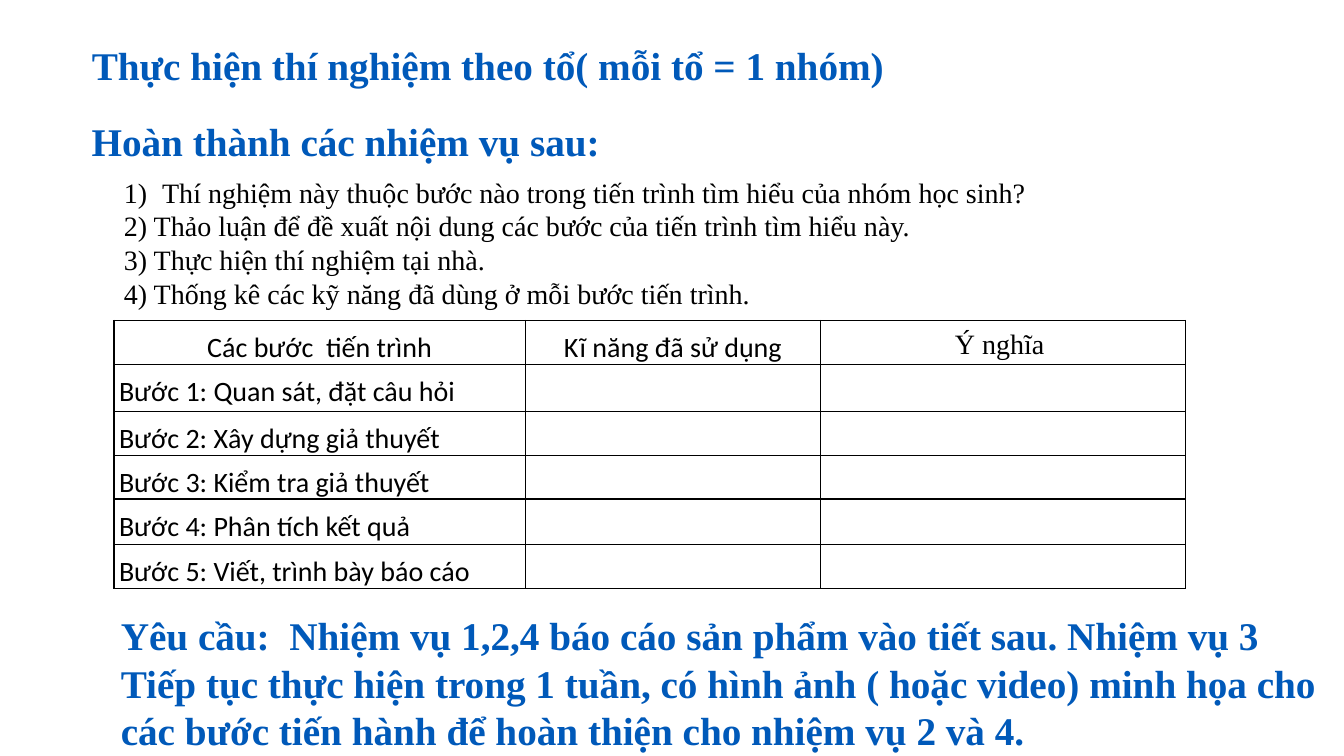
from dataclasses import dataclass

from lxml import etree
from pptx import Presentation
from pptx.dml.color import RGBColor
from pptx.enum.text import MSO_ANCHOR, MSO_AUTO_SIZE, PP_ALIGN
from pptx.oxml.ns import qn
from pptx.util import Inches, Pt

LEFT, MID, JUST = PP_ALIGN.LEFT, PP_ALIGN.CENTER, PP_ALIGN.JUSTIFY
TOP = MSO_ANCHOR.TOP
GROW = MSO_AUTO_SIZE.SHAPE_TO_FIT_TEXT


@dataclass(frozen=True)
class Theme:
    blue: RGBColor = RGBColor(0x00, 0x59, 0xB9)
    black: RGBColor = RGBColor(0, 0, 0)
    serif: str = "Times New Roman"
    sans: str = "Calibri"
    large: int = 28
    small: int = 20


THEME = Theme()
HEAD = {"name": THEME.serif, "size": Pt(THEME.large), "bold": True}
BODY = {"name": THEME.serif, "size": Pt(THEME.small), "bold": False}
CELL = {**BODY, "name": THEME.sans}

TASKS = [
    "Thí nghiệm này thuộc bước nào trong tiến trình tìm hiểu của nhóm học sinh?",
    "2) Thảo luận để đề xuất nội dung các bước của tiến trình tìm hiểu này.",
    "3) Thực hiện thí nghiệm tại nhà.",
    "4) Thống kê các kỹ năng đã dùng ở mỗi bước tiến trình.",
]
HEADS = ["Các bước  tiến trình", "Kĩ năng đã sử dụng", "Ý nghĩa "]
STEPS = [
    "Bước 1: Quan sát, đặt câu hỏi",
    "Bước 2: Xây dựng giả thuyết",
    "Bước 3: Kiểm tra giả thuyết",
    "Bước 4: Phân tích kết quả",
    "Bước 5: Viết, trình bày báo cáo",
]
NOTE = [
    "Yêu cầu:  Nhiệm vụ 1,2,4 báo cáo sản phẩm vào tiết sau. Nhiệm vụ 3",
    "Tiếp tục thực hiện trong 1 tuần, có hình ảnh ( hoặc video) minh họa cho",
    "các bước tiến hành để hoàn thiện cho nhiệm vụ 2 và 4.",
]
COLS = [4.08, 2.93, 3.62]
ROWS = [0.37, 0.47, 0.4, 0.43, 0.45, 0.43]


def apply(item, form):
    for key, value in form.items():
        setattr(item, key, value)


def share(deck, left, top, width, height):
    wide, high = deck.slide_width / 100, deck.slide_height / 100
    return [round(n) for n in (left * wide, top * high, width * wide, height * high)]


def write(frame, lines, form, tint, align=LEFT):
    for at, line in enumerate(lines):
        para = frame.add_paragraph() if at else frame.paragraphs[0]
        para.alignment = align
        run = para.add_run()
        run.text = line
        apply(run.font, form)
        run.font.color.rgb = tint


def add_title(slide, box, text):
    title = slide.shapes.title
    apply(title, dict(zip(("left", "top", "width", "height"), box)))
    frame = title.text_frame
    apply(frame, {"word_wrap": False, "auto_size": GROW, "vertical_anchor": TOP})
    write(frame, [text], HEAD, THEME.blue)


def add_text(slide, box, lines, form, tint, wrap=False, align=LEFT):
    frame = slide.shapes.add_textbox(*box).text_frame
    apply(frame, {"word_wrap": wrap, "auto_size": GROW})
    write(frame, lines, form, tint, align)
    return frame


def add_tasks(slide, box):
    frame = add_text(slide, box, TASKS, BODY, THEME.black, True, JUST)
    props = frame.paragraphs[0]._p.get_or_add_pPr()
    dent = Inches(0.38)
    props.set("marL", str(dent))
    props.set("indent", str(-dent))
    etree.SubElement(props, qn("a:buFont"), typeface=THEME.serif)
    etree.SubElement(props, qn("a:buAutoNum"), type="arabicParenR")


def add_rules(cell):
    props = cell._tc.get_or_add_tcPr()
    for at, side in enumerate(("lnL", "lnR", "lnT", "lnB")):
        line = etree.Element(qn(f"a:{side}"), w=str(Pt(1)))
        fill = etree.SubElement(line, qn("a:solidFill"))
        etree.SubElement(fill, qn("a:srgbClr"), val=str(THEME.black))
        props.insert(at, line)


def add_steps(slide, box):
    grid = slide.shapes.add_table(len(ROWS), len(COLS), *box).table
    apply(grid, {"first_row": False, "horz_banding": False})
    for col, part in zip(grid.columns, COLS):
        col.width = round(box[2] * part / sum(COLS))
    for row, part in zip(grid.rows, ROWS):
        row.height = round(box[3] * part / sum(ROWS))
    edge = {"margin_left": Inches(0.05), "margin_right": Inches(0.05),
            "margin_top": 0, "margin_bottom": 0}
    texts = [HEADS] + [[step, "", ""] for step in STEPS]
    for r, row in enumerate(texts):
        align = MID if r == 0 else LEFT if r < 4 else JUST
        for c, text in enumerate(row):
            cell = grid.cell(r, c)
            apply(cell, edge)
            cell.fill.background()
            add_rules(cell)
            if text:
                form = BODY if c == 2 else CELL
                write(cell.text_frame, [text], form, THEME.black, align)
                cell.text_frame.paragraphs[0].line_spacing = 1.3


def main():
    deck = Presentation()
    apply(deck, {"slide_width": Inches(13.33), "slide_height": Inches(7.5)})
    slide = deck.slides.add_slide(deck.slide_layouts[5])
    add_tasks(slide, share(deck, 8.48, 22.53, 82.22, 23.73))
    add_title(slide, share(deck, 6.08, 4.8, 61.14, 7.6),
              "Thực hiện thí nghiệm theo tổ( mỗi tổ = 1 nhóm)")
    add_text(slide, share(deck, 6.08, 14.93, 40.51, 7.6),
             ["Hoàn thành các nhiệm vụ sau:"], HEAD, THEME.blue)
    add_steps(slide, share(deck, 8.48, 42.4, 79.74, 34))
    add_text(slide, share(deck, 8.25, 80.27, 91.45, 20.13), NOTE, HEAD, THEME.blue)
    deck.save("out.pptx")


if __name__ == "__main__":
    main()
